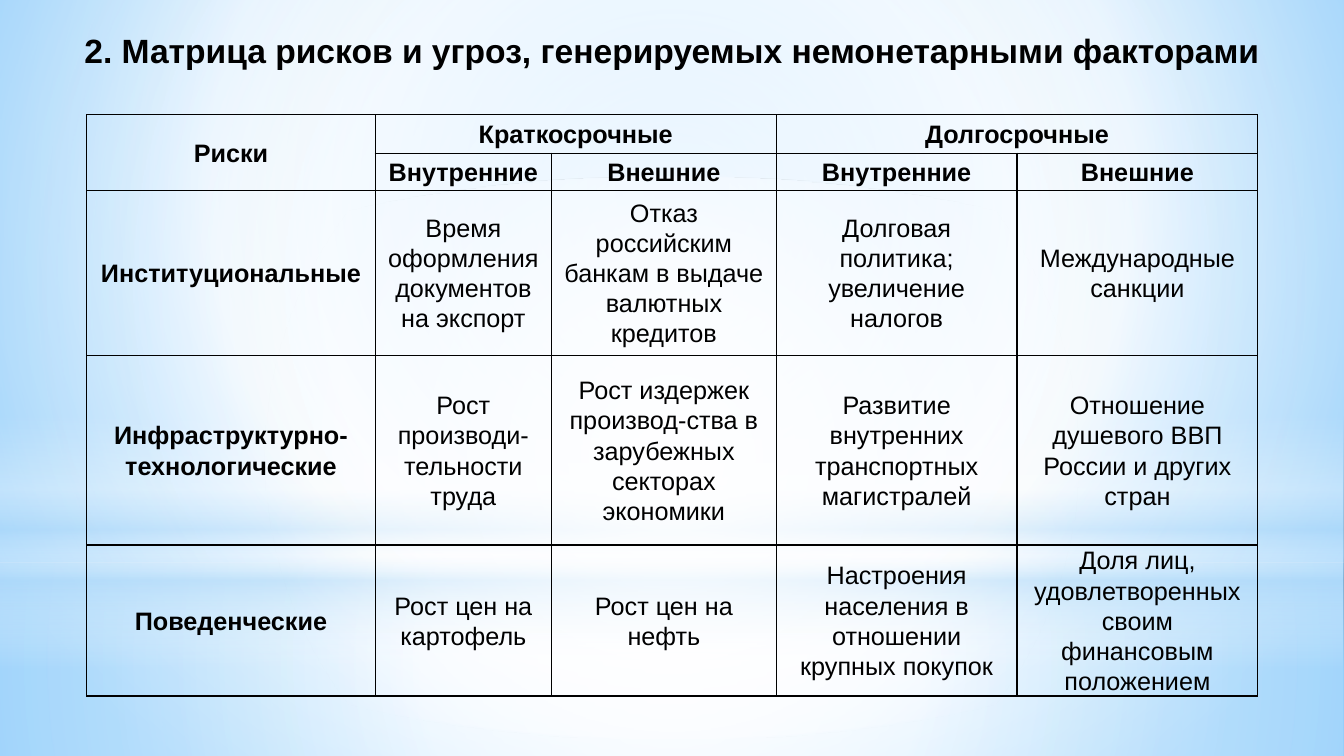
"""Build a one-slide matrix of risks and threats."""
from dataclasses import dataclass

from lxml import etree
from pptx import Presentation
from pptx.dml.color import RGBColor
from pptx.enum.shapes import MSO_SHAPE
from pptx.enum.text import MSO_ANCHOR, PP_ALIGN
from pptx.oxml.ns import qn
from pptx.util import Pt

RECT, OVAL = MSO_SHAPE.RECTANGLE, MSO_SHAPE.OVAL
MIDDLE, CENTER = MSO_ANCHOR.MIDDLE, PP_ALIGN.CENTER


@dataclass(frozen=True)
class Theme:
    font: str = "Arial"
    ink: str = "000000"
    white: str = "FFFFFF"
    haze: str = "B4DCFA"
    sky: str = "9ED5FF"
    deep: str = "5BB9FF"
    title: int = 24
    body: int = 18
    border: int = 1


T = Theme()
WIDTH, HEIGHT = 960, 540
CENTRED = (50, 50, 50, 50)

BACKGROUND = [(0, T.sky, 100), (60, T.white, 100), (100, T.deep, 100)]
GLOWS = [
    (RECT, 401.8, 138.2, CENTRED,
     [(0, T.white, 91), (37, T.white, 76), (100, T.haze, 79)]),
    (RECT, 0, 401.8, CENTRED,
     [(0, T.white, 89), (48, T.white, 62), (100, T.haze, 79)]),
    (RECT, 296.6, 180, None,
     [(0, T.white, 0), (29, T.white, 30), (45, T.haze, 40),
      (55, T.white, 26), (65, T.haze, 60), (100, T.white, 0)]),
    (OVAL, 126, 401.8, CENTRED, [(0, T.white, 100), (56, T.white, 0)]),
]

COLS = [206, 126, 160.5, 172, 172]
ROWS = [27.4, 26.6, 118, 135.4, 99.4]
MERGES = [(0, 0, 1, 0), (0, 1, 0, 2), (0, 3, 0, 4)]
MATRIX = [
    ["Риски", "Краткосрочные", "", "Долгосрочные", ""],
    ["", "Внутренние", "Внешние", "Внутренние", "Внешние"],
    ["Институциональные", "Время оформления документов на экспорт",
     "Отказ российским банкам в выдаче валютных кредитов",
     "Долговая политика; увеличение налогов", "Международные санкции"],
    ["Инфраструктурно-технологические", "Рост производи-тельности труда",
     "Рост издержек производ-ства в зарубежных секторах экономики",
     "Развитие внутренних транспортных магистралей",
     "Отношение душевого ВВП России и других стран"],
    ["Поведенческие", "Рост цен на картофель", "Рост цен на нефть",
     "Настроения населения в отношении крупных покупок",
     "Доля лиц, удовлетворенных своим финансовым положением"],
]


def write(tf, text, size=T.body, bold=False, spacing=1.0):
    p = tf.paragraphs[0]
    p.alignment, p.line_spacing = CENTER, spacing
    r = p.add_run()
    r.text = text
    r.font.name, r.font.size, r.font.bold = T.font, Pt(size), bold
    r.font.color.rgb = RGBColor.from_string(T.ink)


def add(parent, tag, **attrs):
    return etree.SubElement(parent, qn(tag), {k: str(v) for k, v in attrs.items()})


def set_gradient(fill, element, stops, focus=None):
    fill.gradient()
    grad = next(element.iter(qn("a:gradFill")))
    for child in list(grad):
        grad.remove(child)
    gs_list = add(grad, "a:gsLst")
    for pos, color, alpha in stops:
        clr = add(add(gs_list, "a:gs", pos=pos * 1000), "a:srgbClr", val=color)
        if alpha < 100:
            add(clr, "a:alpha", val=alpha * 1000)
    if focus:
        sides = {k: v * 1000 for k, v in zip("ltrb", focus)}
        add(add(grad, "a:path", path="circle"), "a:fillToRect", **sides)
    else:
        add(grad, "a:lin", ang=90 * 60000, scaled=0)


def set_borders(cell):
    tc_pr = cell._tc.get_or_add_tcPr()
    for i, side in enumerate("LRTB"):
        ln = add(tc_pr, f"a:ln{side}", w=Pt(T.border))
        add(add(ln, "a:solidFill"), "a:srgbClr", val=T.ink)
        tc_pr.insert(i, ln)


class Deck:
    def __init__(self, theme):
        self.theme = theme
        self.prs = Presentation()
        self.prs.slide_width, self.prs.slide_height = Pt(WIDTH), Pt(HEIGHT)
        self.s = self.prs.slides.add_slide(self.prs.slide_layouts[5])

    def background(self, stops, focus):
        set_gradient(self.s.background.fill, self.s._element, stops, focus)

    def glow(self, kind, top, height, focus, stops):
        sp = self.s.shapes.add_shape(kind, 0, Pt(top), Pt(WIDTH), Pt(height))
        sp.shadow.inherit = False
        sp.line.fill.background()
        set_gradient(sp.fill, sp._element, stops, focus)

    def title(self, text, top, height):
        sp = self.s.shapes.title
        sp.left, sp.top, sp.width, sp.height = 0, Pt(top), Pt(WIDTH), Pt(height)
        self.s.shapes._spTree.append(sp._element)
        sp.text_frame.word_wrap = True
        sp.text_frame.vertical_anchor = MIDDLE
        write(sp.text_frame, text, size=self.theme.title, bold=True, spacing=0.9)

    def table(self, left, top, cols, rows, texts, merges):
        frame = self.s.shapes.add_table(len(rows), len(cols), Pt(left), Pt(top),
                                        Pt(sum(cols)), Pt(sum(rows)))
        table = frame.table
        table.first_row = table.horz_banding = False
        for col, width in zip(table.columns, cols):
            col.width = Pt(width)
        for row, height in zip(table.rows, rows):
            row.height = Pt(height)
        for r1, c1, r2, c2 in merges:
            table.cell(r1, c1).merge(table.cell(r2, c2))
        for i, line in enumerate(texts):
            for j, text in enumerate(line):
                cell = table.cell(i, j)
                cell.fill.background()
                set_borders(cell)
                cell.vertical_anchor = MIDDLE
                cell.margin_left = cell.margin_right = Pt(6.5)
                cell.margin_top = cell.margin_bottom = 0
                if text:
                    write(cell.text_frame, text, bold=i < 2 or j == 0, spacing=1.07)


def main():
    deck = Deck(T)
    deck.background(BACKGROUND, (20, 10, 20, 60))
    for glow in GLOWS:
        deck.glow(*glow)
    deck.title("2. Матрица рисков и угроз, генерируемых немонетарными факторами",
               6.5, 62.6)
    deck.table(62, 82, COLS, ROWS, MATRIX, MERGES)
    deck.prs.save("out.pptx")


if __name__ == "__main__":
    main()
